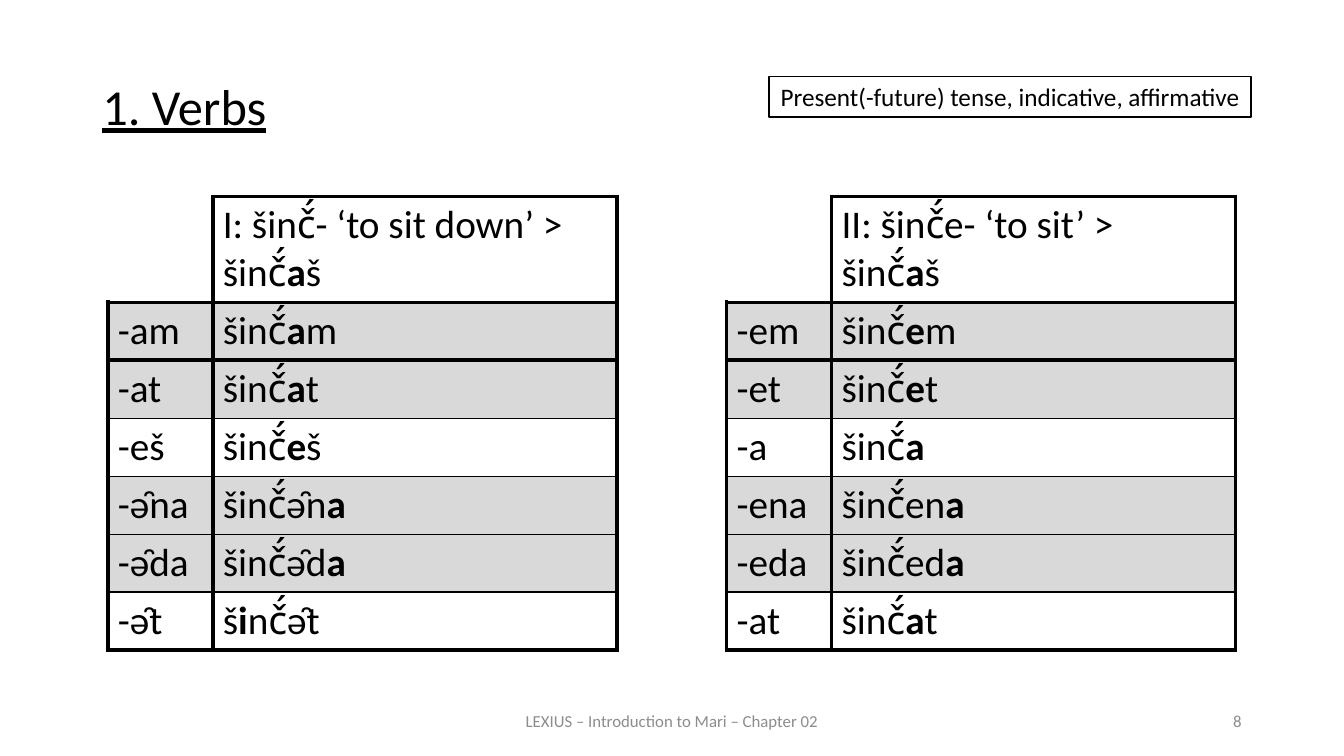
from lxml.etree import SubElement
from pptx import Presentation
from pptx.dml.color import RGBColor
from pptx.enum.shapes import MSO_SHAPE
from pptx.enum.text import MSO_ANCHOR, PP_ALIGN
from pptx.oxml.ns import qn
from pptx.util import Pt

BLACK, GREY, SHADE, WHITE = "000000", "8C8C8C", "D9D9D9", "FFFFFF"
THICK, THIN = 3, 1
HEADER_HEIGHT, ROW_HEIGHT = 75.6, 41.4
SHADED_ROWS = (1, 2, 4, 5)

FIRST_CONJUGATION = [
    ("", "I: šinč́- ‘to sit down’ >\nšinč́*a*š"),
    ("-am", "šinč́*a*m"),
    ("-at", "šinč́*a*t"),
    ("-eš", "šinč́*e*š"),
    ("-ə̑na", "šinč́ə̑n*a*"),
    ("-ə̑da", "šinč́ə̑d*a*"),
    ("-ə̑t", "š*i*nč́ə̑t"),
]
SECOND_CONJUGATION = [
    ("", "II: šinč́e- ‘to sit’ >\nšinč́*a*š"),
    ("-em", "šinč́*e*m"),
    ("-et", "šinč́*e*t"),
    ("-a", "šinč́*a*"),
    ("-ena", "šinč́en*a*"),
    ("-eda", "šinč́ed*a*"),
    ("-at", "šinč́*a*t"),
]


def color(value):
    return RGBColor.from_string(value)


def style_font(font, size, value=BLACK):
    font.name = "Calibri"
    font.size = Pt(size)
    font.color.rgb = color(value)


def write_line(text_frame, text, size, value=BLACK, align=PP_ALIGN.LEFT):
    text_frame.word_wrap = True
    text_frame.text = text
    paragraph = text_frame.paragraphs[0]
    paragraph.alignment = align
    style_font(paragraph.runs[0].font, size, value)
    return paragraph


def add_text(slide, box, text, size, value, align, anchor):
    shape = slide.shapes.add_textbox(*map(Pt, box))
    shape.text_frame.vertical_anchor = anchor
    return write_line(shape.text_frame, text, size, value, align)


def add_title(slide, box):
    paragraph = add_text(slide, box, "1. Verbs", 36, BLACK, PP_ALIGN.JUSTIFY, MSO_ANCHOR.TOP)
    paragraph.line_spacing = 0.9
    paragraph.space_before = Pt(12)
    paragraph.runs[0].font.underline = True


def add_tense_label(slide, box):
    shape = slide.shapes.add_shape(MSO_SHAPE.RECTANGLE, *map(Pt, box))
    shape.shadow.inherit = False
    shape.fill.solid()
    shape.fill.fore_color.rgb = color(WHITE)
    shape.line.color.rgb = color(BLACK)
    shape.line.width = Pt(1)
    write_line(shape.text_frame, "Present(-future) tense, indicative, affirmative", 18,
               align=PP_ALIGN.CENTER)


def set_borders(cell, left, right, top, bottom):
    properties = cell._tc.get_or_add_tcPr()
    for side, width in zip("LRTB", (left, right, top, bottom)):
        line = SubElement(properties, qn(f"a:ln{side}"), w=str(Pt(width)))
        if width:
            fill = SubElement(line, qn("a:solidFill"))
            SubElement(fill, qn("a:srgbClr"), val=BLACK)
        else:
            SubElement(line, qn("a:noFill"))


def write_cell(cell, text):
    cell.text_frame.text = text.replace("*", "")
    for paragraph, marked in zip(cell.text_frame.paragraphs, text.split("\n")):
        paragraph.text = ""
        style_font(paragraph.font, 28)
        for position, part in enumerate(marked.split("*")):
            if part:
                run = paragraph.add_run()
                run.text = part
                style_font(run.font, 28)
                run.font.bold = position % 2 == 1


def add_conjugation(slide, box, rows):
    table = slide.shapes.add_table(len(rows), 2, *map(Pt, box)).table
    table.first_row = table.horz_banding = False
    ending_width = 75
    table.columns[0].width = Pt(ending_width)
    table.columns[1].width = Pt(box[2] - ending_width)
    rules = [THICK, THICK, THICK] + [THIN] * (len(rows) - 3) + [THICK]
    for row, texts in enumerate(rows):
        table.rows[row].height = Pt(ROW_HEIGHT if row else HEADER_HEIGHT)
        for column, text in enumerate(texts):
            cell = table.cell(row, column)
            write_cell(cell, text)
            corner = row == 0 and column == 0
            set_borders(cell, 0 if corner else THICK, THICK,
                        0 if corner else rules[row], rules[row + 1])
            if row in SHADED_ROWS:
                cell.fill.solid()
                cell.fill.fore_color.rgb = color(SHADE)
            else:
                cell.fill.background()


def add_footer(slide, top, height):
    add_text(slide, (318, top, 324, height), "LEXIUS – Introduction to Mari – Chapter 02",
             12, GREY, PP_ALIGN.CENTER, MSO_ANCHOR.MIDDLE)
    add_text(slide, (678, top, 216, height), "8", 12, GREY, PP_ALIGN.RIGHT, MSO_ANCHOR.MIDDLE)


def main():
    presentation = Presentation()
    presentation.slide_width, presentation.slide_height = Pt(960), Pt(540)
    slide = presentation.slides.add_slide(presentation.slide_layouts[6])
    add_title(slide, (66, 54.7, 828, 430.6))
    add_footer(slide, 500.5, 28.75)
    table_height = HEADER_HEIGHT + 6 * ROW_HEIGHT
    for left, rows in ((77, FIRST_CONJUGATION), (519, SECOND_CONJUGATION)):
        add_conjugation(slide, (left, 140.4, 363.6, table_height), rows)
    add_tense_label(slide, (549.4, 54.7, 344.2, 29))
    presentation.save("out.pptx")


if __name__ == "__main__":
    main()
